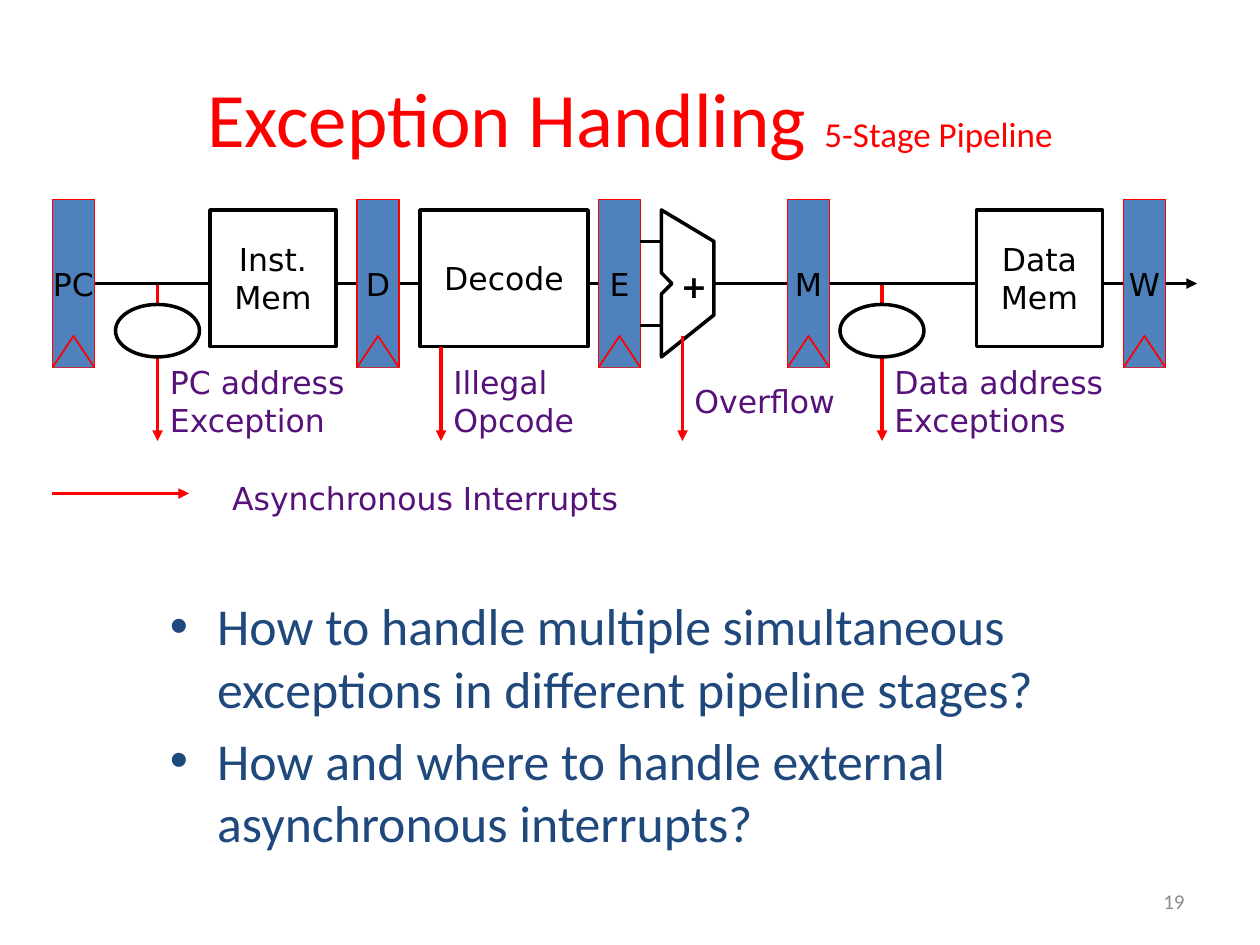
from pptx import Presentation
from pptx.dml.color import RGBColor
from pptx.enum.shapes import MSO_CONNECTOR, MSO_SHAPE
from pptx.enum.text import MSO_ANCHOR, PP_ALIGN
from pptx.oxml.ns import qn
from pptx.util import Pt
from lxml.etree import SubElement

RED = RGBColor(0xFF, 0x00, 0x00)
BLACK = RGBColor(0x00, 0x00, 0x00)
WHITE = RGBColor(0xFF, 0xFF, 0xFF)
BLUE = RGBColor(0x4F, 0x81, 0xBD)
NAVY = RGBColor(0x1F, 0x49, 0x7D)
PURPLE = RGBColor(0x56, 0x12, 0x7A)
GREY = RGBColor(0x8C, 0x8C, 0x8C)

prs = Presentation()
prs.slide_width, prs.slide_height = Pt(720), Pt(540)
slide = prs.slides.add_slide(prs.slide_layouts[6])
shapes = slide.shapes


def write(shape, text, color, size=18, font="DejaVu Sans", align=PP_ALIGN.CENTER,
          wrap=True, anchor=MSO_ANCHOR.MIDDLE):
    frame = shape.text_frame
    frame.word_wrap = wrap
    frame.vertical_anchor = anchor
    frame.text = text
    for paragraph in frame.paragraphs:
        paragraph.alignment = align
        paragraph.font.name = font
        paragraph.font.size = Pt(size)
        paragraph.font.color.rgb = color
    return frame


def wire(x1, y1, x2, y2, color=BLACK, arrow=False):
    line = shapes.add_connector(MSO_CONNECTOR.STRAIGHT, Pt(x1), Pt(y1), Pt(x2), Pt(y2))
    line.line.color.rgb = color
    line.line.width = Pt(2)
    if arrow:
        SubElement(line.line._get_or_add_ln(), qn("a:tailEnd"), type="triangle")
    SubElement(line._element.spPr, qn("a:effectLst"))


# Slide number
number = shapes.add_textbox(Pt(516), Pt(500.5), Pt(168), Pt(28.75))
write(number, "19", GREY, 12, "Calibri", PP_ALIGN.RIGHT)

# Title with a smaller subtitle run
title = shapes.add_textbox(Pt(36), Pt(21.6), Pt(648), Pt(90))
heading = write(title, "Exception Handling ", RED, 44, "Calibri").paragraphs[0]
subtitle = heading.add_run()
subtitle.text = "5-Stage Pipeline"
subtitle.font.size = Pt(20)

# Questions
questions = shapes.add_textbox(Pt(90), Pt(336), Pt(543.6), Pt(144))
question_frame = write(
    questions,
    "How to handle multiple simultaneous exceptions in different pipeline stages?\n"
    "How and where to handle external asynchronous interrupts?",
    NAVY, 29.6, "Calibri", PP_ALIGN.LEFT, anchor=MSO_ANCHOR.TOP)
for question in question_frame.paragraphs:
    question.space_before = Pt(5.92)
    props = question._p.get_or_add_pPr()
    props.set("marL", str(Pt(27)))
    props.set("indent", str(Pt(-27)))
    SubElement(props, qn("a:buFont"), typeface="Arial")
    SubElement(props, qn("a:buChar"), char="•")

# Address checks and the main data path, behind the stages
for check_x in (504, 90):
    wire(check_x, 162, check_x, 252, RED, arrow=True)
wire(408, 162, 684, 162, arrow=True)
wire(42, 162, 342, 162)

# Memories and decoder
for left, width, name in ((120, 72, "Inst. Mem"), (240, 96, "Decode"), (558, 72, "Data Mem")):
    unit = shapes.add_shape(MSO_SHAPE.RECTANGLE, Pt(left), Pt(120), Pt(width), Pt(78))
    unit.shadow.inherit = False
    unit.fill.solid()
    unit.fill.fore_color.rgb = WHITE
    unit.line.color.rgb = BLACK
    unit.line.width = Pt(2)
    write(unit, name, BLACK)

# Pipeline registers, each with a clock notch
for left, name in ((30, "PC"), (204, "D"), (342, "E"), (450, "M"), (642, "W")):
    register = shapes.add_shape(MSO_SHAPE.RECTANGLE, Pt(left), Pt(114), Pt(24), Pt(96))
    notch_path = shapes.build_freeform(left, 210, scale=Pt(1))
    notch_path.add_line_segments([(left + 12, 192), (left + 24, 210)], close=False)
    for part in (register, notch_path.convert_to_shape()):
        part.shadow.inherit = False
        part.fill.solid()
        part.fill.fore_color.rgb = BLUE
        part.line.color.rgb = RED
        part.line.width = Pt(1)
    write(register, name, BLACK, wrap=False)

# Adder with its two inputs
adder_path = shapes.build_freeform(378, 120, scale=Pt(1))
adder_path.add_line_segments(
    [(378, 156), (384, 162), (378, 168), (378, 204), (408, 180), (408, 138)], close=True)
adder = adder_path.convert_to_shape()
adder.shadow.inherit = False
adder.fill.solid()
adder.fill.fore_color.rgb = WHITE
adder.line.color.rgb = BLACK
adder.line.width = Pt(2)
for input_y in (138, 186):
    wire(366, input_y, 378, input_y)
plus = shapes.add_textbox(Pt(382), Pt(150), Pt(28), Pt(27))
write(plus, "+", BLACK, wrap=False).paragraphs[0].font.bold = True

# Address check ellipses
for check_x in (504, 90):
    check = shapes.add_shape(MSO_SHAPE.OVAL, Pt(check_x - 24), Pt(174), Pt(48), Pt(30))
    check.shadow.inherit = False
    check.fill.solid()
    check.fill.fore_color.rgb = WHITE
    check.line.color.rgb = BLACK
    check.line.width = Pt(2)

# Exception labels
for left, top, width, height, cause, align in (
    (90, 204, 126.5, 50.5, "PC address Exception", PP_ALIGN.LEFT),
    (252, 204, 96, 50.5, "Illegal Opcode", PP_ALIGN.LEFT),
    (387, 214.8, 100, 29, "Overflow", PP_ALIGN.CENTER),
    (504, 204, 144, 50.5, "Data address Exceptions", PP_ALIGN.LEFT),
    (114, 270, 258, 29, "Asynchronous Interrupts", PP_ALIGN.CENTER),
):
    label = shapes.add_textbox(Pt(left), Pt(top), Pt(width), Pt(height))
    write(label, cause, PURPLE, align=align)

# Exception and interrupt arrows in front of the stages
wire(30, 282, 108, 282, RED, arrow=True)
wire(252, 198, 252, 252, RED, arrow=True)
wire(390, 192, 390, 252, RED, arrow=True)

prs.save("out.pptx")
